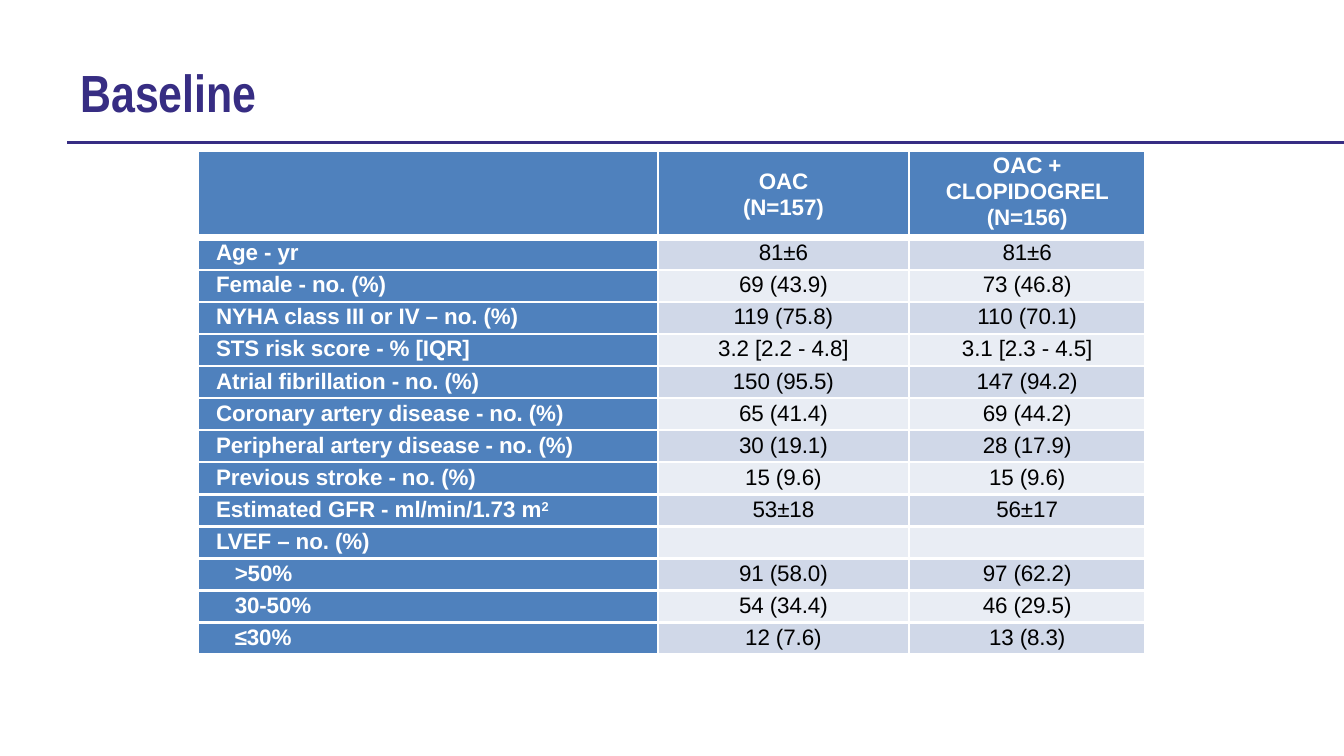
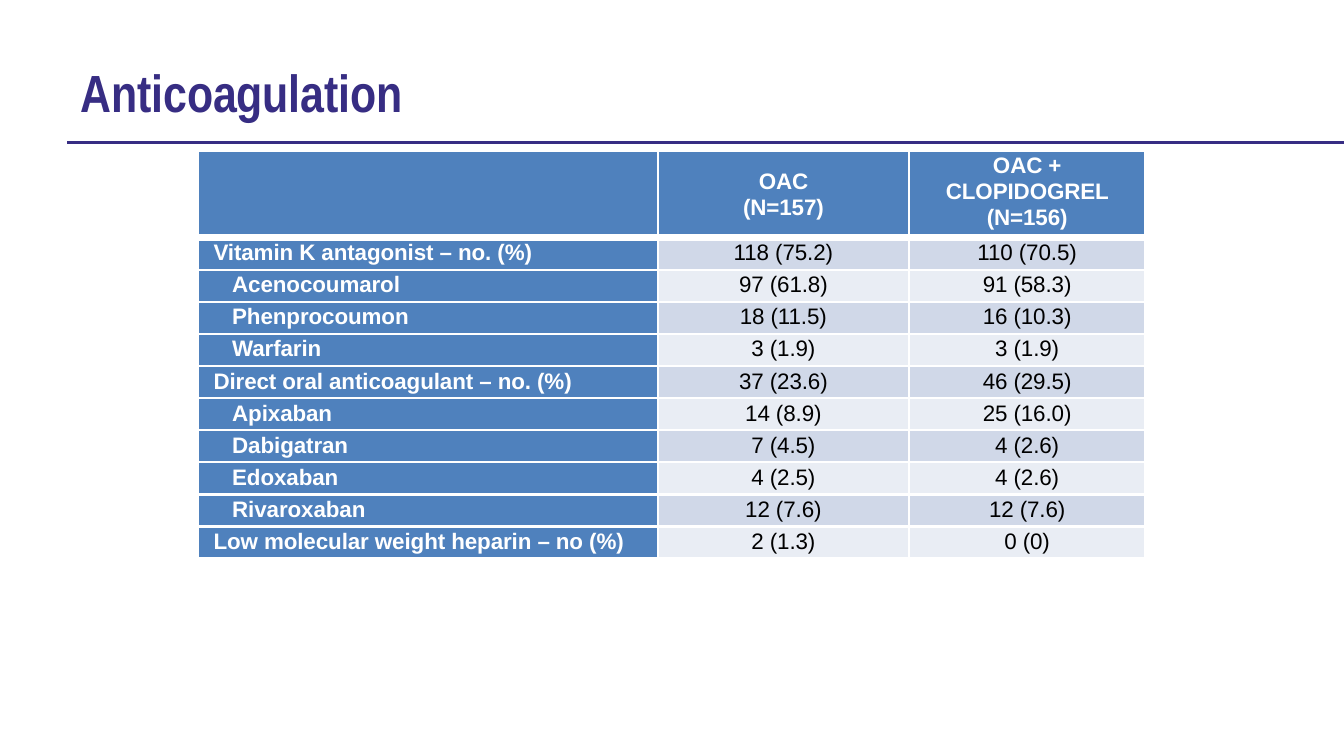
from typing import NamedTuple

from lxml.etree import SubElement
from pptx import Presentation
from pptx.dml.color import RGBColor
from pptx.enum.shapes import MSO_CONNECTOR
from pptx.enum.text import MSO_ANCHOR, MSO_AUTO_SIZE, PP_ALIGN
from pptx.oxml.ns import qn
from pptx.util import Pt

PURPLE, BLUE, WHITE, BLACK = "372D83", "4F81BD", "FFFFFF", "000000"
BANDS = ("D0D8E8", "E9EDF4")
COLS = (246.6, 134.7, 126.5)
LEFT, TOP, HEAD, STEP = 105.8, 80.6, 46.8, 17.2
THIN, THICK = 1.5, 4.25


class Face(NamedTuple):
    name: str
    size: float
    bold: bool
    hue: str
    track: int


class Row(NamedTuple):
    label: str
    solo: str = ""
    duo: str = ""
    depth: int = 0


class Page(NamedTuple):
    title: str
    width: float
    indent: float
    rows: list[Row]


class Pad(NamedTuple):
    left: float = 0
    top: float = 1.4
    right: float = 0


TITLE = Face("Arial Narrow", 28, True, PURPLE, -5)
LABEL = Face("Arial", 12, True, WHITE, -5)
VALUE = Face("Arial", 12, False, BLACK, -5)
HEADS = (
    ("", Pad()),
    ("OAC (N=157)", Pad(43, 9.4, 43)),
    ("OAC + CLOPIDOGREL (N=156)", Pad(18, 1, 18)),
)

PAGES = [
    Page("Baseline", 96.5, 10, [
        Row("Age - yr", "81±6", "81±6"),
        Row("Female - no. (%)", "69 (43.9)", "73 (46.8)"),
        Row("NYHA class III or IV – no. (%)", "119 (75.8)", "110 (70.1)"),
        Row("STS risk score - % [IQR]", "3.2 [2.2 - 4.8]", "3.1 [2.3 - 4.5]"),
        Row("Atrial fibrillation - no. (%)", "150 (95.5)", "147 (94.2)"),
        Row("Coronary artery disease - no. (%)", "65 (41.4)", "69 (44.2)"),
        Row("Peripheral artery disease - no. (%)", "30 (19.1)", "28 (17.9)"),
        Row("Previous stroke - no. (%)", "15 (9.6)", "15 (9.6)"),
        Row("Estimated GFR - ml/min/1.73 m^2", "53±18", "56±17"),
        Row("LVEF – no. (%)"),
        Row(">50%", "91 (58.0)", "97 (62.2)", 1),
        Row("30-50%", "54 (34.4)", "46 (29.5)", 1),
        Row("≤30%", "12 (7.6)", "13 (8.3)", 1),
    ]),
    Page("Anticoagulation", 175, 8.6, [
        Row("Vitamin K antagonist – no. (%)", "118 (75.2)", "110 (70.5)"),
        Row("Acenocoumarol", "97 (61.8)", "91 (58.3)", 1),
        Row("Phenprocoumon", "18 (11.5)", "16 (10.3)", 1),
        Row("Warfarin", "3 (1.9)", "3 (1.9)", 1),
        Row("Direct oral anticoagulant – no. (%)", "37 (23.6)", "46 (29.5)"),
        Row("Apixaban", "14 (8.9)", "25 (16.0)", 1),
        Row("Dabigatran", "7 (4.5)", "4 (2.6)", 1),
        Row("Edoxaban", "4 (2.5)", "4 (2.6)", 1),
        Row("Rivaroxaban", "12 (7.6)", "12 (7.6)", 1),
        Row("Low molecular weight heparin – no (%)", "2 (1.3)", "0 (0)"),
    ]),
]


def tint(part, hue: str) -> None:
    part.solid()
    part.fore_color.rgb = RGBColor.from_string(hue)


def apply(item, traits: dict) -> None:
    for key, value in traits.items():
        setattr(item, key, value)


def write(para, text: str, face: Face) -> None:
    for spot, piece in enumerate(text.split("^")):
        run = para.add_run()
        run.text = piece
        apply(run.font, {"name": face.name, "size": Pt(face.size), "bold": face.bold})
        tint(run.font.fill, face.hue)
        props = run._r.get_or_add_rPr()
        props.set("spc", str(face.track))
        if spot:
            props.set("baseline", "28000")


def edge(cell, above: float, below: float) -> None:
    props = cell._tc.get_or_add_tcPr()
    for side, width in (("L", THIN), ("R", THIN), ("T", above), ("B", below)):
        line = SubElement(props, qn(f"a:ln{side}"), w=str(Pt(width)))
        fill = SubElement(line, qn("a:solidFill"))
        SubElement(fill, qn("a:srgbClr"), val=WHITE)


def put(cell, text: str, face: Face, hue: str, pad: Pad, align: PP_ALIGN,
        above: float = THIN, below: float = THIN) -> None:
    edge(cell, above, below)
    tint(cell.fill, hue)
    apply(cell, {
        "margin_left": Pt(pad.left), "margin_top": Pt(pad.top),
        "margin_right": Pt(pad.right), "margin_bottom": 0,
        "vertical_anchor": MSO_ANCHOR.TOP,
    })
    para = cell.text_frame.paragraphs[0]
    para.alignment = align
    if text:
        write(para, text, face)
    else:
        SubElement(para._p, qn("a:endParaRPr"), sz=str(face.size * 100))


def add_title(slide, page: Page) -> None:
    title = slide.shapes.title
    apply(title, {"left": Pt(42.5), "top": Pt(31), "width": Pt(page.width), "height": Pt(35.3)})
    frame = title.text_frame
    apply(frame, {
        "margin_left": Pt(0.7), "margin_top": Pt(1), "margin_right": 0, "margin_bottom": 0,
        "word_wrap": False, "auto_size": MSO_AUTO_SIZE.NONE, "vertical_anchor": MSO_ANCHOR.TOP,
    })
    para = frame.paragraphs[0]
    para.alignment = PP_ALIGN.LEFT
    write(para, page.title, TITLE)


def add_rule(slide) -> None:
    rule = slide.shapes.add_connector(MSO_CONNECTOR.STRAIGHT, Pt(36), Pt(76.4), Pt(720), Pt(76.4))
    tint(rule.line.fill, PURPLE)
    rule.line.width = Pt(2)
    SubElement(rule._element.spPr, qn("a:effectLst"))


def add_grid(slide, page: Page) -> None:
    count = len(page.rows)
    grid = slide.shapes.add_table(count + 1, len(COLS), Pt(LEFT), Pt(TOP),
                                  Pt(sum(COLS)), Pt(HEAD + STEP * count)).table
    grid.horz_banding = False
    for col, width in zip(grid.columns, COLS):
        col.width = Pt(width)
    for line, high in zip(grid.rows, [HEAD] + [STEP] * count):
        line.height = Pt(high)
    for spot, (text, pad) in enumerate(HEADS):
        cell = grid.cell(0, spot)
        put(cell, text, LABEL, BLUE, pad, PP_ALIGN.CENTER, below=THICK)
        cell.text_frame.paragraphs[0].line_spacing = Pt(14)
    for rank, row in enumerate(page.rows, 1):
        above = THICK if rank == 1 else THIN
        pad = Pad(left=page.indent + 10 * row.depth)
        put(grid.cell(rank, 0), row.label, LABEL, BLUE, pad, PP_ALIGN.LEFT, above)
        for spot, text in enumerate((row.solo, row.duo), 1):
            put(grid.cell(rank, spot), text, VALUE, BANDS[(rank - 1) % 2], Pad(),
                PP_ALIGN.CENTER, above)


def main() -> None:
    deck = Presentation()
    apply(deck, {"slide_width": Pt(720), "slide_height": Pt(405)})
    for page in PAGES:
        slide = deck.slides.add_slide(deck.slide_layouts[5])
        add_rule(slide)
        add_title(slide, page)
        add_grid(slide, page)
    deck.save("out.pptx")


if __name__ == "__main__":
    main()
